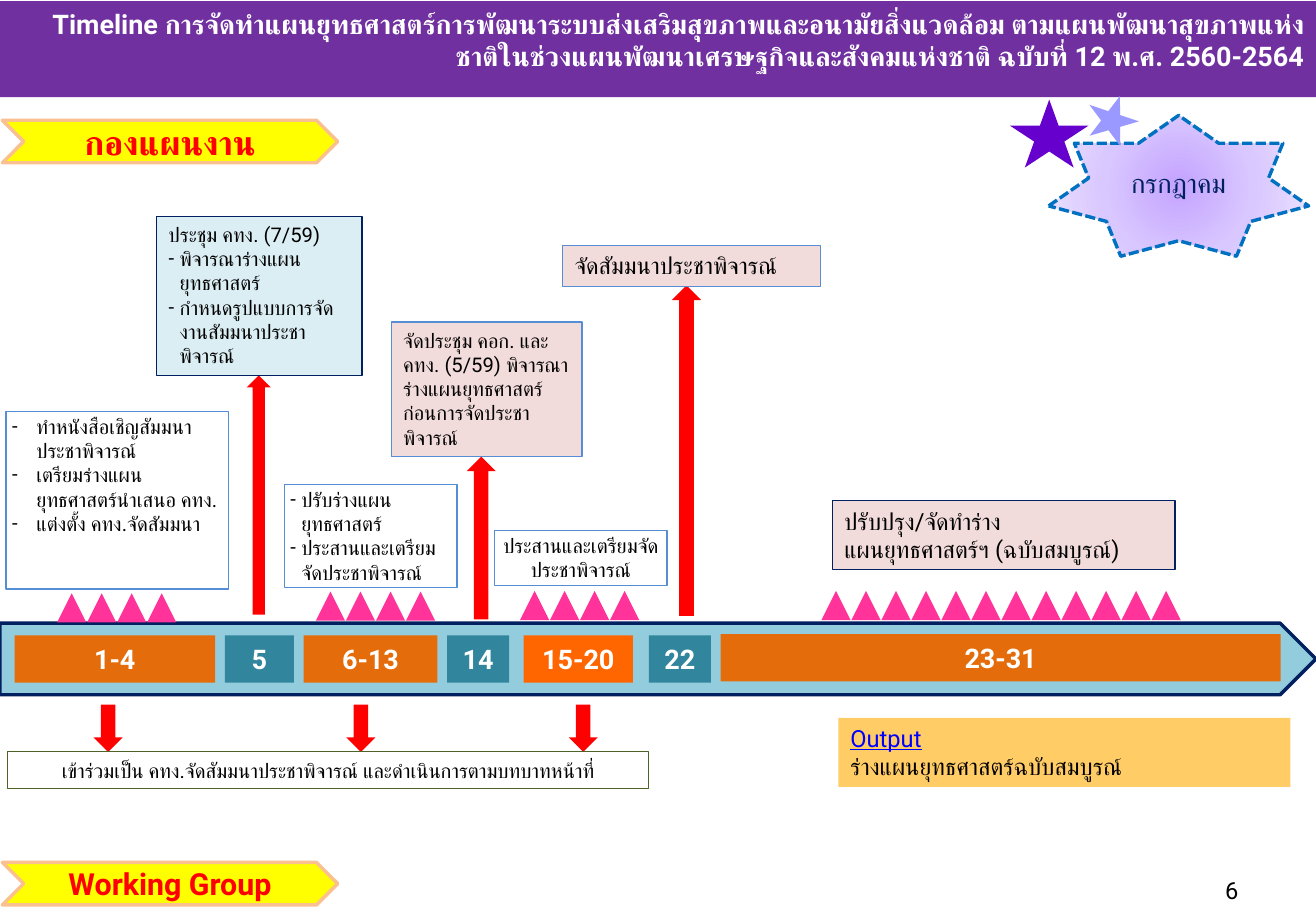
from dataclasses import dataclass
from lxml.etree import SubElement
from pptx import Presentation
from pptx.dml.color import RGBColor
from pptx.enum.dml import MSO_LINE
from pptx.enum.shapes import MSO_SHAPE as Form
from pptx.enum.text import MSO_ANCHOR as Anchor, MSO_AUTO_SIZE, PP_ALIGN as Align
from pptx.oxml.ns import qn
from pptx.util import Inches, Pt

FONT = "Roboto"
# The grid has 1083 columns and 750 rows over the whole slide
COLS, ROWS = 1083, 750

deck = Presentation()
deck.slide_width, deck.slide_height = Inches(10.83), Inches(7.5)
slide = deck.slides.add_slide(deck.slide_layouts[6])


@dataclass
class Box:
    """A shape on the grid; lines that start with "- " become bullets."""
    col: float
    row: float
    wide: float
    high: float
    fill: str = ""
    edge: str = ""
    lines: tuple[str, ...] = ()
    form: Form = Form.RECTANGLE
    width: float = 0.75
    size: float = 12
    ink: str = "000000"
    bold: bool = False
    align: Align = Align.LEFT
    anchor: Anchor = Anchor.TOP
    pad: tuple[float, float] = (10, 5)
    left: float = 0
    hang: float = 0
    turn: float = 0


def across(cols: float) -> int:
    return round(deck.slide_width * cols / COLS)


def down(rows: float) -> int:
    return round(deck.slide_height * rows / ROWS)


def hue(code: str) -> RGBColor:
    return RGBColor.from_string(code)


def apply(item, **looks) -> None:
    for name, value in looks.items():
        setattr(item, name, value)


def write(box: Box, shape) -> None:
    frame = shape.text_frame
    side, top = across(box.pad[0]), down(box.pad[1])
    apply(frame, word_wrap=True, auto_size=MSO_AUTO_SIZE.NONE,
          vertical_anchor=box.anchor, margin_left=side, margin_right=side,
          margin_top=top, margin_bottom=top)
    for i, line in enumerate(box.lines):
        para = frame.add_paragraph() if i else frame.paragraphs[0]
        para.alignment = box.align
        props = para._p.get_or_add_pPr()
        if box.left:
            props.set("marL", str(across(box.left)))
        if line.startswith("- "):
            props.set("marL", str(across(box.hang)))
            props.set("indent", str(-across(box.hang)))
            SubElement(props, qn("a:buFont")).set("typeface", FONT)
            SubElement(props, qn("a:buChar")).set("char", "-")
        run = para.add_run()
        run.text = line.removeprefix("- ")
        apply(run.font, name=FONT, size=Pt(box.size), bold=box.bold)
        run.font.color.rgb = hue(box.ink)
        SubElement(run._r.get_or_add_rPr(), qn("a:cs")).set("typeface", FONT)


def draw(box: Box):
    shape = slide.shapes.add_shape(box.form, across(box.col), down(box.row),
                                   across(box.wide), down(box.high))
    shape.shadow.inherit = False
    shape.rotation = box.turn
    for part, code in ((shape.fill, box.fill), (shape.line.fill, box.edge)):
        if code:
            part.solid()
            part.fore_color.rgb = hue(code)
        else:
            part.background()
    if box.edge:
        shape.line.width = Pt(box.width)
    if box.lines:
        write(box, shape)
    return shape


def glow(shape, stops: dict[int, str]) -> None:
    """Swap the plain fill for a round gradient from the centre."""
    props = shape._element.spPr
    plain = props.find(qn("a:solidFill"))
    grad = plain.makeelement(qn("a:gradFill"))
    props.replace(plain, grad)
    chain = SubElement(grad, qn("a:gsLst"))
    for share, code in stops.items():
        stop = SubElement(chain, qn("a:gs"), pos=str(share * 1000))
        SubElement(stop, qn("a:srgbClr"), val=code)
    ring = SubElement(grad, qn("a:path"), path="circle")
    SubElement(ring, qn("a:fillToRect"), l="50000", t="50000", r="50000", b="50000")


MID = {"align": Align.CENTER, "anchor": Anchor.MIDDLE}
TIGHT = {"edge": "558ED5", "pad": (5, 2)}

# Title band
draw(Box(0, 1, 1083, 79, "7030A0", "", (
    "Timeline การจัดทำแผนยุทธศาสตร์การพัฒนาระบบส่งเสริมสุขภาพและอนามัยสิ่งแวดล้อม "
    "ตามแผนพัฒนาสุขภาพแห่งชาติในช่วงแผนพัฒนาเศรษฐกิจและสังคมแห่งชาติ "
    "ฉบับที่ 12 พ.ศ. 2560-2564",),
    size=16, ink="FFFFFF", bold=True, align=Align.RIGHT, left=10))

# Time bar with its spans of days
draw(Box(0, 513, 1083, 59, "93CDDD", "002060", form=Form.PENTAGON, width=2))
ORANGE, TEAL = "E46C0A", "31859C"
for col, row, wide, fill, days in (
        (12, 523, 165, ORANGE, "1-4"), (185, 523, 57, TEAL, "5"),
        (250, 523, 110, ORANGE, "6-13"), (368, 523, 51, TEAL, "14"),
        (431, 523, 90, "FF6600", "15-20"), (534, 523, 51, TEAL, "22"),
        (593, 522, 461, ORANGE, "23-31")):
    draw(Box(col, row, wide, 39, fill, "", (days,), size=16, ink="FFFFFF",
             bold=True, **MID))

# Red arrows up to the meetings and down to the joint task
for col, row, wide, high in ((203, 309, 20, 197), (384, 376, 24, 134),
                             (553, 235, 24, 272)):
    draw(Box(col, row, wide, high, "FF0000", form=Form.UP_ARROW))
for col in (77, 285, 468):
    draw(Box(col, 580, 24, 39, "FF0000", form=Form.DOWN_ARROW))

# Month star and two small stars
month = draw(Box(863, 95, 214, 116, "D9C7FF", "0070C0", ("กรกฎาคม",),
                 Form.STAR_7_POINT, 2, 16, "002060", **MID))
month.line.dash_style = MSO_LINE.SQUARE_DOT
glow(month, {0: "C4A3FF", 50: "D9C7FF", 100: "ECE4FF"})
draw(Box(831, 82, 65, 56, "6600CC", form=Form.STAR_5_POINT))
draw(Box(894, 78, 43, 39, "9999FF", form=Form.STAR_5_POINT, turn=18.5))

# Yellow banners
for row, size, team in ((99, 20, "กองแผนงาน"), (710, 18, "Working Group")):
    draw(Box(2, row, 276, 35, "FFFF00", "FAC090", (team,), Form.CHEVRON, 2,
             size, "FF0000", True, **MID))

# Tasks and meetings
for task in (
        Box(6, 619, 528, 30, "", "4F6228",
            ("เข้าร่วมเป็น คทง.จัดสัมมนาประชาพิจารณ์ และดำเนินการตามบทบาทหน้าที่",),
            align=Align.CENTER),
        Box(129, 178, 169, 131, "DBEEF4", "002060",
            ("ประชุม คทง. (7/59)", "- พิจารณาร่างแผนยุทธศาสตร์",
             "- กำหนดรูปแบบการจัดงานสัมมนาประชาพิจารณ์"), hang=9),
        Box(685, 412, 282, 57, "F2DCDB", "002060",
            ("ปรับปรุง/จัดทำร่าง", "แผนยุทธศาสตร์ฯ (ฉบับสมบูรณ์)"), size=14),
        Box(463, 202, 212, 34, "F2DCDB", "558ED5",
            ("จัดสัมมนาประชาพิจารณ์",), size=14),
        Box(322, 265, 157, 111, "F2DCDB", "558ED5",
            ("จัดประชุม คอก. และ คทง. (5/59) พิจารณาร่างแผนยุทธศาสตร์"
             "ก่อนการจัดประชาพิจารณ์",)),
        Box(5, 339, 183, 146, lines=(
            "- ทำหนังสือเชิญสัมมนาประชาพิจารณ์",
            "- เตรียมร่างแผนยุทธศาสตร์นำเสนอ คทง.",
            "- แต่งตั้ง คทง.จัดสัมมนา"), hang=20, **TIGHT),
        Box(234, 399, 142, 85, lines=(
            "- ปรับร่างแผนยุทธศาสตร์", "- ประสานและเตรียมจัดประชาพิจารณ์"),
            hang=9, **TIGHT),
        Box(407, 437, 142, 45, lines=("ประสานและเตรียมจัดประชาพิจารณ์",),
            align=Align.CENTER, **TIGHT)):
    draw(task)

# Output
result = draw(Box(690, 591, 372, 57, "FFCC66", "",
                  ("Output", "ร่างแผนยุทธศาสตร์ฉบับสมบูรณ์"), size=14))
head = result.text_frame.paragraphs[0].runs[0].font
head.underline = True
head.color.rgb = hue("0000FF")

# Rows of pink marks above the bar
for col, row, count in ((47, 488.5, 4), (260, 487, 4), (428, 486.5, 4),
                        (676, 486.5, 12)):
    for i in range(count):
        draw(Box(col + 24.7 * i, row, 24, 24, "FF3399",
                 form=Form.ISOSCELES_TRIANGLE))

# Page number
page = Box(776, 713, 253, 40, lines=("6",), size=14, align=Align.RIGHT,
           anchor=Anchor.MIDDLE)
write(page, slide.shapes.add_textbox(across(page.col), down(page.row),
                                     across(page.wide), down(page.high)))

deck.save("out.pptx")
